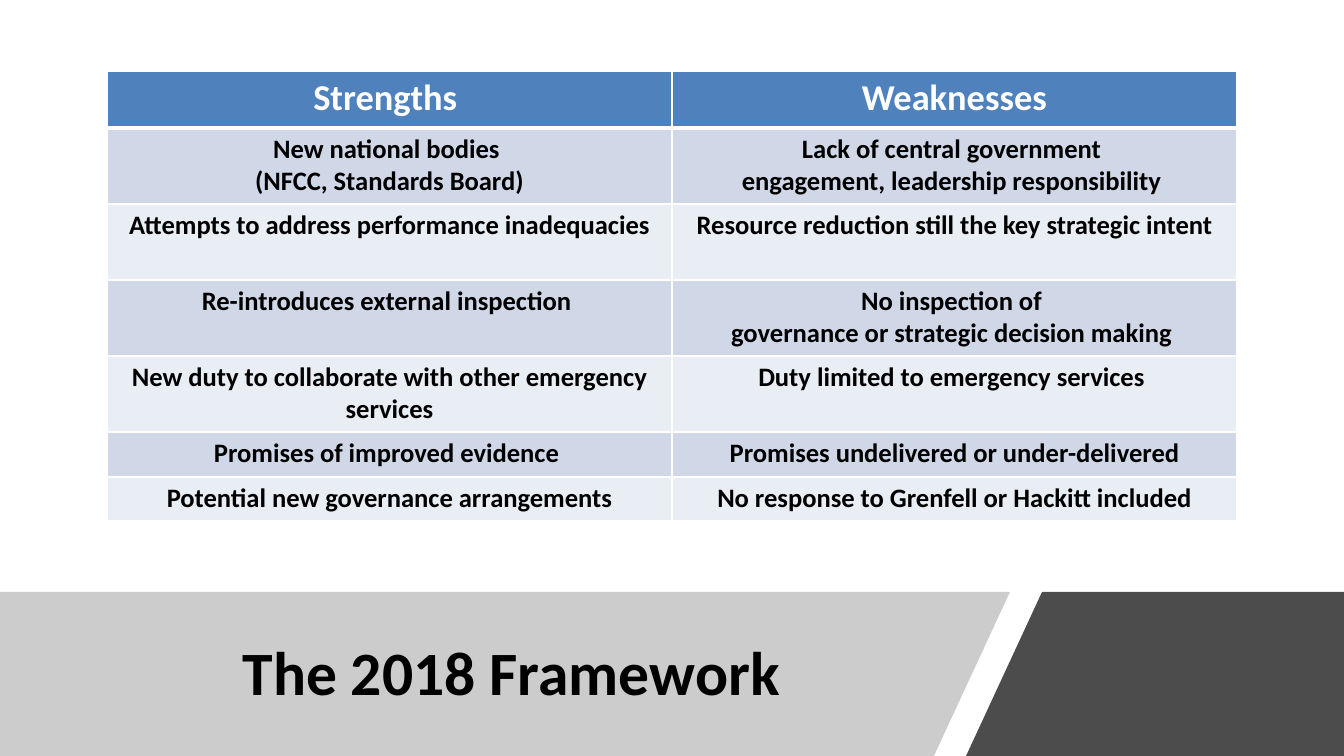
from lxml.etree import SubElement
from pptx import Presentation
from pptx.dml.color import RGBColor
from pptx.enum.text import MSO_ANCHOR as Anchor, PP_ALIGN as Align
from pptx.oxml.ns import qn
from pptx.util import Emu, Pt

PX = 914400 / 100.8
FONT = "Calibri"
ROW_HEIGHTS = [57, 76, 76, 76, 76, 45, 44]
ROWS = [
    ("Strengths ", "Weaknesses"),
    ("New national bodies \n(NFCC, Standards Board)",
     "Lack of central government \nengagement, leadership responsibility "),
    ("Attempts to address performance inadequacies",
     "Resource reduction still the key strategic intent"),
    ("Re-introduces external inspection ",
     "No inspection of \ngovernance or strategic decision making "),
    ("New duty to collaborate with other emergency services",
     "Duty limited to emergency services "),
    ("Promises of improved evidence ", "Promises undelivered or under-delivered"),
    ("Potential new governance arrangements",
     "No response to Grenfell or Hackitt included"),
]


def px(n):
    """Convert pixels to EMU."""
    return Emu(round(n * PX))


def rgb(value):
    """Turn a hex string into a colour."""
    return RGBColor.from_string(value)


def paint(fill, color):
    """Fill solidly with one colour."""
    fill.solid()
    fill.fore_color.rgb = rgb(color)


def write(tf, text, size, color):
    """Write centred bold text, one paragraph per line."""
    tf.text = text
    for p in tf.paragraphs:
        p.alignment = Align.CENTER
        p.font.name = FONT
        p.font.size = Pt(size)
        p.font.bold = True
        p.font.color.rgb = rgb(color)


def add_band(slide, points, color, opacity):
    """Draw a translucent polygon."""
    builder = slide.shapes.build_freeform(*points[0], scale=PX)
    builder.add_line_segments(points[1:], close=True)
    s = builder.convert_to_shape()
    s.shadow.inherit = False
    s.line.fill.background()
    paint(s.fill, color)
    clr = s.fill._xPr.find(qn("a:solidFill")).find(qn("a:srgbClr"))
    SubElement(clr, qn("a:alpha"), val=str(opacity * 1000))


def set_borders(cell, color, **widths):
    """Set the cell borders, widths in points by side."""
    tc_pr = cell._tc.get_or_add_tcPr()
    for side, width in widths.items():
        ln = SubElement(tc_pr, qn(f"a:ln{side}"), w=str(Pt(width)))
        SubElement(SubElement(ln, qn("a:solidFill")), qn("a:srgbClr"), val=color)


def add_grid(slide, left, top, col_width):
    """Add the table with a header row and banded body rows."""
    cols = len(ROWS[0])
    table = slide.shapes.add_table(len(ROWS), cols, px(left), px(top),
                                   px(col_width * cols), px(sum(ROW_HEIGHTS))).table
    for col in table.columns:
        col.width = px(col_width)
    for i, (height, texts) in enumerate(zip(ROW_HEIGHTS, ROWS)):
        table.rows[i].height = px(height)
        for cell, text in zip(table.rows[i].cells, texts):
            set_borders(cell, "FFFFFF", L=1, R=1, T=3 if i == 1 else 1,
                        B=3 if i == 0 else 1)
            if i == 0:
                paint(cell.fill, "4F81BD")
                write(cell.text_frame, text, 26, "FFFFFF")
            else:
                paint(cell.fill, "D0D8E8" if i % 2 else "E9EDF4")
                write(cell.text_frame, text, 19, "000000")


def add_title(slide, text, left, top, width, height):
    """Add the title in a wrapped, vertically centred box."""
    tf = slide.shapes.add_textbox(px(left), px(top), px(width), px(height)).text_frame
    tf.word_wrap = True
    tf.vertical_anchor = Anchor.MIDDLE
    write(tf, text, 44, "000000")


def main():
    """Build the slide and save it."""
    prs = Presentation()
    prs.slide_width, prs.slide_height = px(1344), px(756)
    slide = prs.slides.add_slide(prs.slide_layouts[6])
    add_band(slide, [(0, 592), (1010, 592), (934, 756), (0, 756)], "808080", 40)
    add_title(slide, "The 2018 Framework ", 93, 610, 851, 121)
    add_band(slide, [(1042, 592), (1344, 592), (1344, 756), (966, 756)], "000000", 70)
    add_grid(slide, 107, 71, 565)
    prs.save("out.pptx")


if __name__ == "__main__":
    main()
